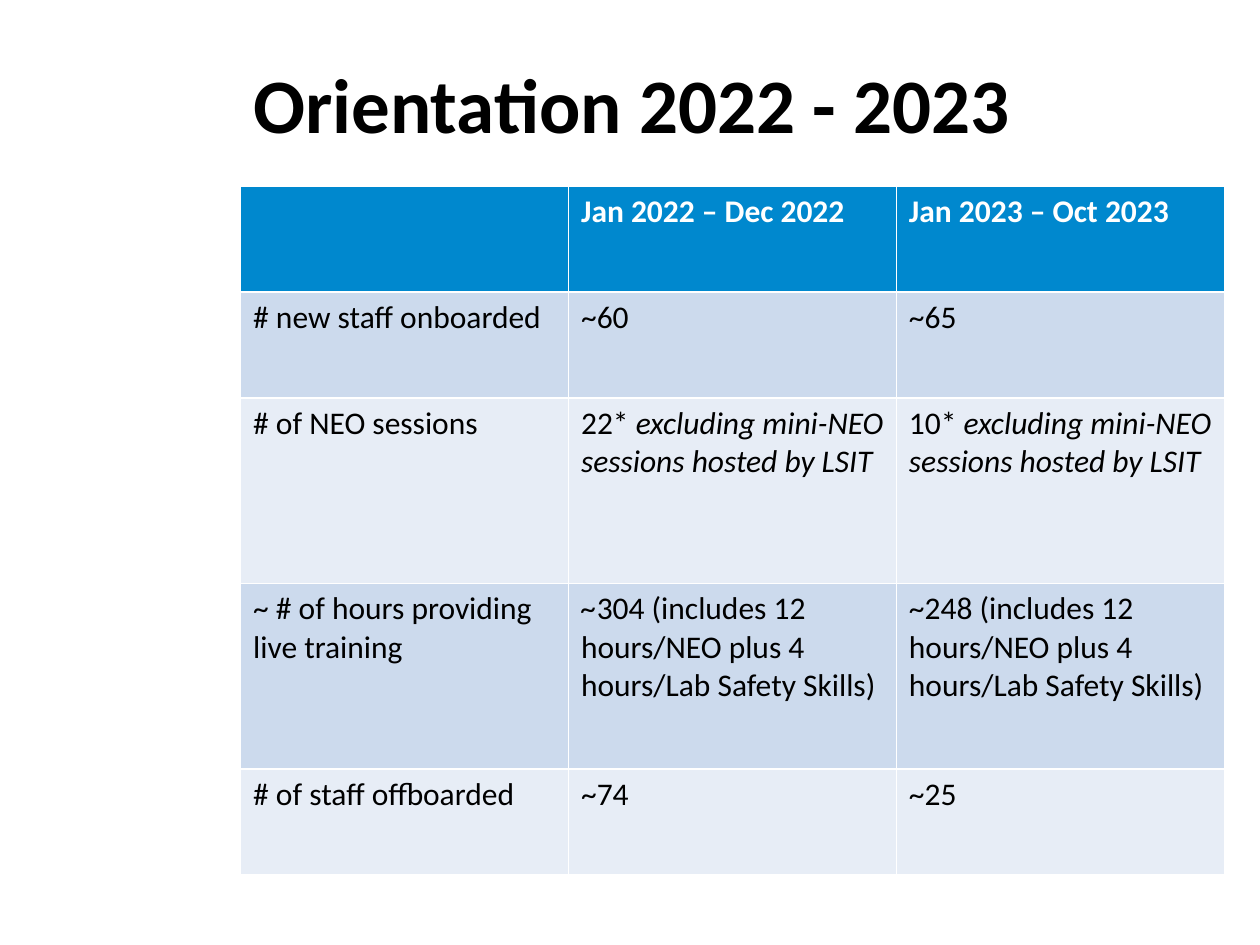
from dataclasses import dataclass

from pptx import Presentation
from pptx.dml.color import RGBColor
from pptx.enum.text import MSO_ANCHOR, PP_ALIGN
from pptx.util import Cm, Pt

LEFT = PP_ALIGN.LEFT
MIDDLE = MSO_ANCHOR.MIDDLE


@dataclass(frozen=True)
class Theme:
    face: str = "Calibri"
    black: str = "000000"
    white: str = "FFFFFF"
    head: str = "0088CE"
    bands: tuple[str, str] = ("CCDAED", "E7EDF6")
    large: int = 44
    small: int = 18


@dataclass(frozen=True)
class Piece:
    text: str
    slant: bool = False


@dataclass(frozen=True)
class Row:
    height: float
    cells: tuple[tuple[Piece, ...], ...]


THEME = Theme()
SHORT, TALL = 2.13, 3.74
WIDTH = 6.61
NOTE = Piece("excluding mini-NEO sessions hosted by LSIT", True)
HOURS = "(includes 12 hours/NEO plus 4 hours/Lab Safety Skills)"


def plain(*texts: str) -> tuple[tuple[Piece, ...], ...]:
    return tuple((Piece(text),) if text else () for text in texts)


ROWS = (
    Row(SHORT, plain("", "Jan 2022 – Dec 2022", "Jan 2023 – Oct 2023")),
    Row(SHORT, plain("# new staff onboarded", "~60", "~65")),
    Row(TALL, ((Piece("# of NEO sessions"),),
               (Piece("22* "), NOTE),
               (Piece("10* "), NOTE))),
    Row(TALL, ((Piece("~ # of hours providing live training"),),
               (Piece("~", True), Piece(f"304 {HOURS}")),
               (Piece(f"~248 {HOURS}"),))),
    Row(SHORT, plain("# of staff offboarded", "~74", "~25")),
)


def style(font, color: str, **values) -> None:
    for name, value in {"name": THEME.face, **values}.items():
        setattr(font, name, value)
    font.color.rgb = RGBColor.from_string(color)


def draw_title(slide, text: str) -> None:
    title = slide.shapes.title
    place = {"left": 4.85, "top": 0.99, "width": 19.02, "height": 2.39}
    for name, value in place.items():
        setattr(title, name, Cm(value))
    frame = title.text_frame
    frame.text = text
    frame.word_wrap = True
    frame.vertical_anchor = MIDDLE
    line = frame.paragraphs[0]
    line.alignment = LEFT
    line.line_spacing = 0.9
    style(line.runs[0].font, THEME.black, size=Pt(THEME.large), bold=True)


def draw_cell(cell, pieces: tuple[Piece, ...], fill: str, color: str, bold: bool) -> None:
    cell.fill.solid()
    cell.fill.fore_color.rgb = RGBColor.from_string(fill)
    line = cell.text_frame.paragraphs[0]
    for piece in pieces:
        run = line.add_run()
        run.text = piece.text
        style(run.font, color, size=Pt(THEME.small), bold=bold, italic=piece.slant)


def draw_table(slide, rows: tuple[Row, ...]) -> None:
    count = len(rows[0].cells)
    height = sum(row.height for row in rows)
    table = slide.shapes.add_table(
        len(rows), count, Cm(4.85), Cm(3.76), Cm(WIDTH * count), Cm(height)
    ).table
    for col in table.columns:
        col.width = Cm(WIDTH)
    for i, row in enumerate(rows):
        table.rows[i].height = Cm(row.height)
        top = i == 0
        fill = THEME.head if top else THEME.bands[(i - 1) % 2]
        color = THEME.white if top else THEME.black
        for j, pieces in enumerate(row.cells):
            draw_cell(table.cell(i, j), pieces, fill, color, top)


def main() -> None:
    deck = Presentation()
    deck.slide_width, deck.slide_height = Cm(25.4), Cm(19.05)
    slide = deck.slides.add_slide(deck.slide_layouts[5])
    draw_title(slide, "Orientation 2022 - 2023")
    draw_table(slide, ROWS)
    deck.save("out.pptx")


if __name__ == "__main__":
    main()
